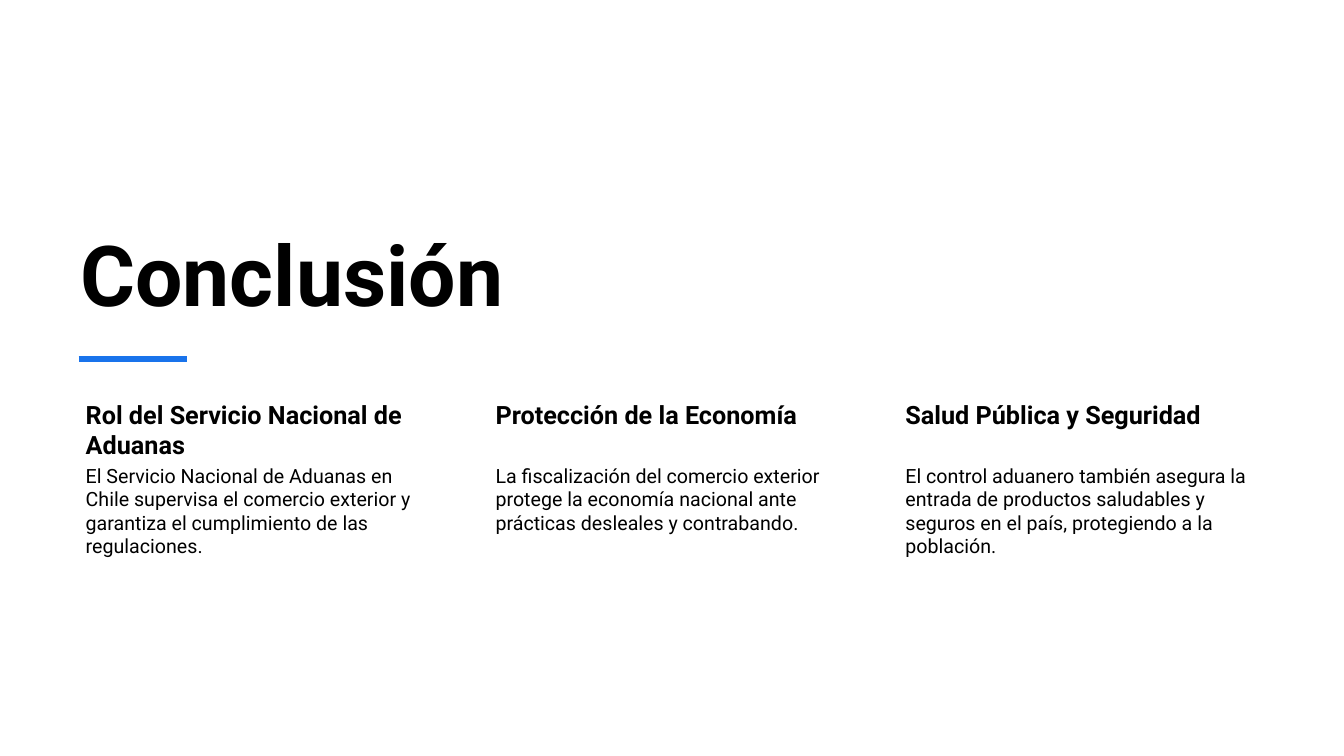
from pptx import Presentation
from pptx import util as u
from pptx.dml.color import RGBColor
from pptx.enum import shapes, text
from pptx.oxml.ns import qn
from lxml import etree

TITLE = "Conclusión"
CONCLUSIONS = [
    ("Rol del Servicio Nacional de Aduanas",
     "El Servicio Nacional de Aduanas en Chile supervisa el comercio exterior "
     "y garantiza el cumplimiento de las regulaciones."),
    ("Protección de la Economía",
     "La fiscalización del comercio exterior protege la economía nacional "
     "ante prácticas desleales y contrabando."),
    ("Salud Pública y Seguridad",
     "El control aduanero también asegura la entrada de productos saludables "
     "y seguros en el país, protegiendo a la población."),
]

FONT = "Roboto"
BLACK = RGBColor(0x00, 0x00, 0x00)
BLUE = RGBColor(0x19, 0x73, 0xEB)

WIDTH, HEIGHT = 13.33, 7.5
LEFT = 0.7
COLUMN_WIDTH, COLUMN_STEP = 3.69, 4.065
HEADING_TOP, HEADING_HEIGHT = 3.93, 0.65
BODY_HEIGHT = 2.07
RULE_LEFT, RULE_RIGHT, RULE_Y = 0.78, 1.85, 3.56


def add_text(s, words, box, size, bold=False, insets=(0.1, 0.05, 0.1, 0.05),
             anchor=text.MSO_ANCHOR.TOP):
    """Add a wrapped one-paragraph text box; box and insets are in inches."""
    tf = s.shapes.add_textbox(*map(u.Inches, box)).text_frame
    tf.word_wrap = True
    tf.vertical_anchor = anchor
    tf.margin_left, tf.margin_top, tf.margin_right, tf.margin_bottom = map(u.Inches, insets)
    p = tf.paragraphs[0]
    p.text = words
    p.font.name, p.font.size, p.font.bold = FONT, u.Pt(size), bold
    p.font.color.rgb = BLACK


def add_rule(s):
    line = s.shapes.add_connector(
        shapes.MSO_CONNECTOR.STRAIGHT,
        *map(u.Inches, (RULE_LEFT, RULE_Y, RULE_RIGHT, RULE_Y)))
    line.line.color.rgb = BLUE
    line.line.width = u.Pt(4.5)
    etree.SubElement(line._element.spPr, qn("a:effectLst"))


def main():
    prs = Presentation()
    prs.slide_width, prs.slide_height = u.Inches(WIDTH), u.Inches(HEIGHT)
    s = prs.slides.add_slide(prs.slide_layouts[6])

    add_text(s, TITLE, (LEFT, 1.72, 8.93, 1.54), 60, True,
             anchor=text.MSO_ANCHOR.BOTTOM)
    for i, (heading, body) in enumerate(CONCLUSIONS):
        x = LEFT + i * COLUMN_STEP
        add_text(s, heading, (x, HEADING_TOP, COLUMN_WIDTH, HEADING_HEIGHT), 18, True,
                 insets=(0.15, 0.03, 0.03, 0.03))
        add_text(s, body, (x, HEADING_TOP + HEADING_HEIGHT, COLUMN_WIDTH, BODY_HEIGHT), 14,
                 insets=(0.15, 0.02, 0.02, 0.02))
    add_rule(s)
    prs.save("out.pptx")


if __name__ == "__main__":
    main()
